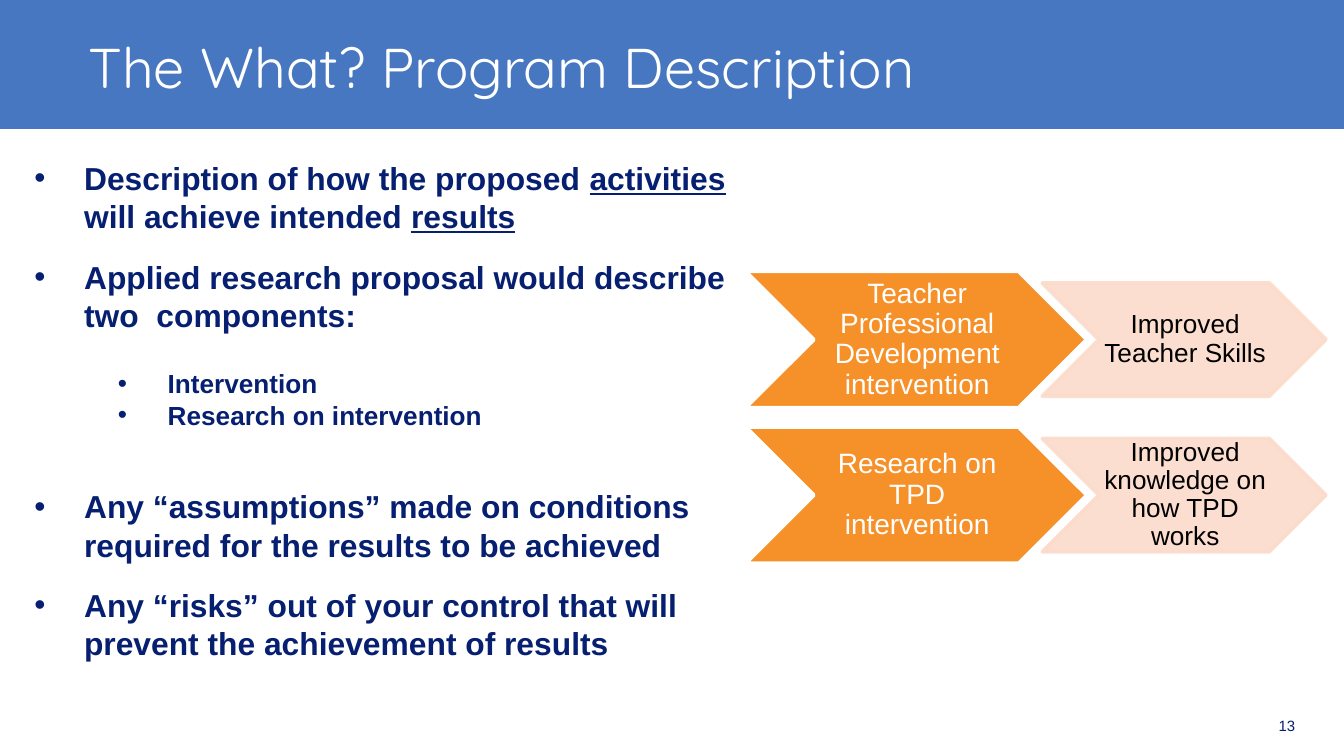
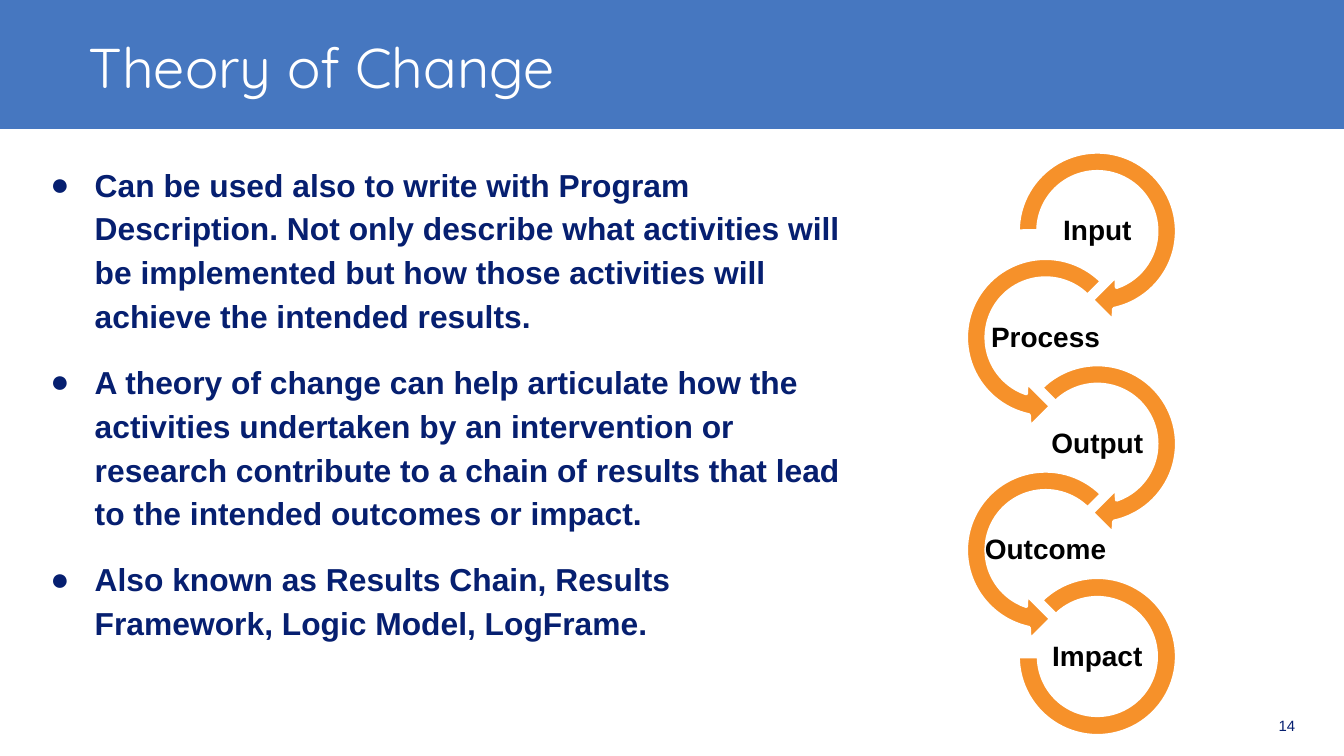
from dataclasses import dataclass
from math import cos, radians, sin

from lxml.etree import SubElement as Sub
from pptx import Presentation
from pptx.dml.color import RGBColor as Rgb
from pptx.enum.shapes import MSO_SHAPE as Kind
from pptx.enum.text import MSO_ANCHOR as Anchor
from pptx.enum.text import MSO_AUTO_SIZE as Fit
from pptx.enum.text import PP_ALIGN as Align
from pptx.oxml.ns import qn
from pptx.util import Cm, Pt


@dataclass(frozen=True)
class Theme:
    """Hold the colours, fonts and type sizes."""

    band: str = "4677C0"
    navy: str = "061F70"
    orange: str = "F6912A"
    peach: str = "FBDBCA"
    white: str = "FFFFFF"
    black: str = "000000"
    head: str = "Quicksand"
    font: str = "Arial"
    title: int = 30
    body: int = 17
    label: int = 15
    small: int = 14
    page: int = 8


T = Theme()
LIST = dict(bold=True, gap=12)
TIGHT = (0.04, 0.02, 0, 0.02)


def place(shape, left, top, width, height):
    """Set a shape's box in centimetres."""
    shape.left, shape.top = Cm(left), Cm(top)
    shape.width, shape.height = Cm(width), Cm(height)


def mark(para, sign, left, hang):
    """Give a paragraph a hanging bullet."""
    props = para._p.get_or_add_pPr()
    props.set("marL", str(Cm(left)))
    props.set("indent", str(-Cm(hang)))
    tint = Sub(props, qn("a:buClr"))
    Sub(tint, qn("a:srgbClr"), val=T.navy)
    Sub(props, qn("a:buFont"), typeface=T.font)
    Sub(props, qn("a:buChar"), char=sign)


def write(shape, *lines, size=T.body, color=T.navy, font=T.font, bold=False,
          align=Align.LEFT, anchor=Anchor.TOP, pads=(0.18, 0.1, 0.18, 0.1),
          gap=0, lead=1.0, bullet=None):
    """Fill a shape with lines, underlining the parts between underscores."""
    frame = shape.text_frame
    frame.word_wrap = True
    frame.auto_size = Fit.NONE
    frame.vertical_anchor = anchor
    (frame.margin_left, frame.margin_top,
     frame.margin_right, frame.margin_bottom) = map(Cm, pads)
    for row, line in enumerate(lines):
        para = frame.add_paragraph() if row else frame.paragraphs[0]
        if bullet:
            mark(para, *bullet)
        para.alignment = align
        para.line_spacing = lead
        para.space_before = Pt(gap if row else 0)
        for part, text in enumerate(line.split("_")):
            if text:
                run = para.add_run()
                run.text = text
                run.font.name, run.font.size = font, Pt(size)
                run.font.bold = bold
                run.font.color.rgb = Rgb.from_string(color)
                if part % 2:
                    run.font.underline = True


def box(slide, area, *lines, **form):
    """Add a text box."""
    write(slide.shapes.add_textbox(*map(Cm, area)), *lines, **form)


def paint(shape, fill, line=None):
    """Set the fill and outline of a shape."""
    shape.shadow.inherit = False
    shape.fill.solid()
    shape.fill.fore_color.rgb = Rgb.from_string(fill)
    if line:
        shape.line.color.rgb = Rgb.from_string(line)
        shape.line.width = Pt(2)
    else:
        shape.line.fill.background()


def chevron(slide, area, text, fill, line, solid=True, **form):
    """Add a chevron with a centred label."""
    shape = slide.shapes.add_shape(Kind.CHEVRON, *map(Cm, area))
    paint(shape, fill, line)
    if not solid:
        for tint in shape.element.spPr.iter(qn("a:srgbClr")):
            Sub(tint, qn("a:alpha"), val="90000")
    write(shape, text, align=Align.CENTER, anchor=Anchor.MIDDLE,
          pads=TIGHT, lead=0.9, **form)


def bend(line, size, first, last, side):
    """Turn a straight edge into an arc between two angles."""
    host = line.getparent()
    begin = first if side > 0 else 180 - first
    arc = Sub(host, qn("a:arcTo"), wR=str(Cm(size)), hR=str(Cm(size)),
              stAng=str(begin % 360 * 60000),
              swAng=str(side * (last - first) * 60000))
    host.replace(line, arc)


def curl(slide, x, y, start, side):
    """Add a round arrow, with side -1 for its mirror image."""
    def spot(size, angle):
        """Find a point at an angle about the centre."""
        turn = radians(angle)
        return size * cos(turn), size * sin(turn)

    outer, inner = [start, 270, 360, 438], [431, 360, 270, start]
    tip = [(0.3, 1.7), (-0.1, 1.3), (0.36, 0.84)]
    dots = ([spot(1.5, a) for a in outer] + tip
            + [spot(1.12, a) for a in inner])
    spots = [(Cm(x + side * a), Cm(y + b)) for a, b in dots]
    pen = slide.shapes.build_freeform(*spots[0], scale=1.0)
    pen.add_line_segments(spots[1:], close=True)
    shape = pen.convert_to_shape()
    edges = list(shape.element.iter(qn("a:lnTo")))
    for size, turns, skip in ((1.5, outer, 0), (1.12, inner, 7)):
        for i in range(3):
            bend(edges[skip + i], size, turns[i], turns[i + 1], side)
    paint(shape, T.orange, T.white)


def chain(slide, names):
    """Draw the chain of round arrows and its labels."""
    for step, name in enumerate(names):
        side = -1 if step % 2 else 1
        x, y = 20.25 + side * 0.49, 4.37 + 2.01 * step
        if step < len(names) - 1:
            curl(slide, x, y, 225 if step else 180, side)
        else:
            ring = slide.shapes.add_shape(
                Kind.BLOCK_ARC, Cm(x - 1.5), Cm(y - 1.5), Cm(3), Cm(3))
            for i, value in enumerate((135, 108, 0.13)):
                ring.adjustments[i] = value
            paint(ring, T.orange, T.white)
        box(slide, (x - 1.42, y - 0.47, 2.84, 0.96), name, size=T.label,
            color=T.black, bold=True, align=Align.CENTER, lead=0.9,
            anchor=Anchor.MIDDLE, pads=(0.02,) * 4)


def dress(deck, layout):
    """Put the band and the title's place on the layout."""
    slide = deck.slides[0]
    band = slide.shapes.add_shape(
        Kind.RECTANGLE, 0, Cm(-0.05), deck.slide_width, Cm(2.49))
    paint(band, T.band)
    band.element.nvSpPr.cNvPr.set("id", "20")
    layout.shapes.element.insert(2, band.element)
    place(layout.placeholders[0], 1.49, 0.23, 22.2, 2.03)


def page(deck, layout, title, number):
    """Add a slide with its title and number."""
    slide = deck.slides.add_slide(layout)
    write(slide.shapes.title, title, size=T.title, color=T.white,
          font=T.head, anchor=Anchor.MIDDLE)
    box(slide, (22.45, 13.15, 2.21, 0.76), str(number), size=T.page,
        align=Align.RIGHT, anchor=Anchor.BOTTOM, pads=(0.18, 0.1, 0.18, 0.03))
    return slide


def plan(slide):
    """Fill the slide on the program."""
    dot = ("•", 1.07, 0.94)
    body = slide.placeholders[1]
    place(body, 0.34, 2.82, 13.74, 4.14)
    write(body,
          "Description of how the proposed _activities_ will achieve "
          "intended _results_",
          "Applied research proposal would describe two  components:",
          bullet=dot, pads=(0.18,) * 4, **LIST)
    pairs = [
        ("Teacher Professional Development intervention",
         "Improved Teacher Skills"),
        ("Research on TPD intervention",
         "Improved knowledge on how TPD works"),
    ]
    for row, (cause, gain) in enumerate(pairs):
        top = 5.13 + 2.94 * row
        chevron(slide, (14.09, top, 6.45, 2.58), cause, T.orange, T.white,
                size=T.label, color=T.white)
        chevron(slide, (19.7, top + 0.22, 5.36, 2.14), gain, T.peach,
                T.peach, solid=False, size=T.small, color=T.black)
    box(slide, (1.92, 6.85, 10.57, 2.08), "Intervention",
        "Research on intervention", size=T.small, bold=True, bullet=dot)
    box(slide, (0.34, 9.11, 13.74, 4.29),
        "Any “assumptions” made on conditions required for the results "
        "to be achieved",
        "Any “risks” out of your control that will prevent the "
        "achievement of results", bullet=dot, **LIST)


def theory(slide):
    """Fill the slide on the theory of change."""
    body = slide.placeholders[1]
    place(body, 0.64, 2.84, 15.6, 6.99)
    write(body,
          "Can be used also to write with Program Description. Not only "
          "describe what activities will be implemented but how those "
          "activities will achieve the intended results.",
          "A theory of change can help articulate how the activities "
          "undertaken by an intervention or research contribute to a chain "
          "of results that lead to the intended outcomes or impact.",
          "Also known as Results Chain, Results Framework, Logic Model, "
          "LogFrame.",
          bullet=("●", 0.97, 0.84), pads=(0.18,) * 4, lead=1.15, **LIST)
    chain(slide, ["Input", "Process", "Output", "Outcome", "Impact"])


def main():
    """Build and save the deck."""
    deck = Presentation()
    deck.slide_width, deck.slide_height = Cm(25.4), Cm(14.29)
    layout = deck.slide_layouts[1]
    plan(page(deck, layout, "The What? Program Description", 13))
    theory(page(deck, layout, "Theory of Change", 14))
    dress(deck, layout)
    deck.save("out.pptx")


if __name__ == "__main__":
    main()
